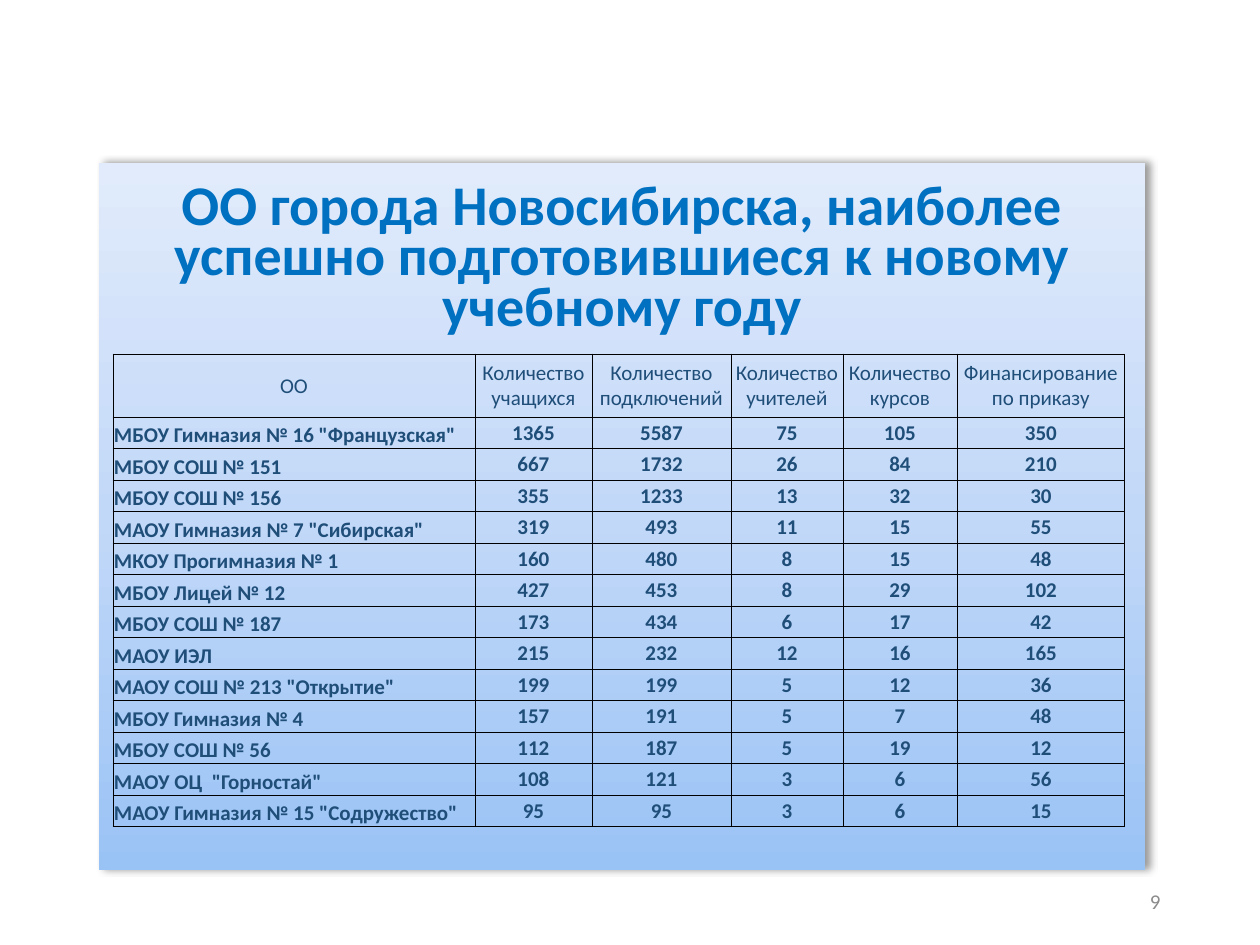
from copy import deepcopy

from pptx import Presentation
from pptx.dml.color import RGBColor
from pptx.enum.shapes import MSO_SHAPE as Shape
from pptx.enum.text import MSO_ANCHOR as Anchor, PP_ALIGN as Align
from pptx.oxml import parse_xml
from pptx.oxml.ns import nsdecls
from pptx.util import Pt

PX = 914400 // 126
SLIDE_SIZE = (1260, 945)
PANEL = (99, 163, 1046, 707)
PANEL_INSET = 22
PANEL_STOPS = [(0, "9AC3F5"), (0.5, "C2D8F8"), (1, "E1EBFB")]
NUMBER_BOX = (890, 876, 283, 50)
TABLE_ORIGIN = (113, 354)
COLUMN_WIDTHS = [362, 117, 139, 112, 114, 168]
HEADER_HEIGHT = 63
BODY_HEIGHT = 410
FONT = "Calibri"
TITLE_COLOR = "0070C0"
TABLE_COLOR = "1F4E79"
NUMBER_COLOR = "8C8C8C"

TITLE = "ОО города Новосибирска, наиболее успешно подготовившиеся к новому учебному году"
SLIDE_NUMBER = "9"
HEADER = (
    "ОО", "Количество учащихся", "Количество подключений",
    "Количество учителей", "Количество курсов", "Финансирование по приказу",
)
SCHOOLS = [
    ('МБОУ Гимназия № 16 "Французская"', 1365, 5587, 75, 105, 350),
    ("МБОУ СОШ № 151", 667, 1732, 26, 84, 210),
    ("МБОУ СОШ № 156", 355, 1233, 13, 32, 30),
    ('МАОУ Гимназия № 7 "Сибирская"', 319, 493, 11, 15, 55),
    ("МКОУ Прогимназия № 1", 160, 480, 8, 15, 48),
    ("МБОУ Лицей № 12", 427, 453, 8, 29, 102),
    ("МБОУ СОШ № 187", 173, 434, 6, 17, 42),
    ("МАОУ ИЭЛ", 215, 232, 12, 16, 165),
    ('МАОУ СОШ № 213 "Открытие"', 199, 199, 5, 12, 36),
    ("МБОУ Гимназия № 4", 157, 191, 5, 7, 48),
    ("МБОУ СОШ № 56", 112, 187, 5, 19, 12),
    ('МАОУ ОЦ  "Горностай"', 108, 121, 3, 6, 56),
    ('МАОУ Гимназия № 15 "Содружество"', 95, 95, 3, 6, 15),
]


def emu(*lengths):
    return [round(length * PX) for length in lengths]


def rgb(color):
    return RGBColor.from_string(color)


def write(text_frame, text, size, color, align, bold=False):
    text_frame.text = text
    paragraph = text_frame.paragraphs[0]
    paragraph.alignment = align
    for run in paragraph.runs:
        run.font.name = FONT
        run.font.size = Pt(size)
        run.font.bold = bold
        run.font.color.rgb = rgb(color)
    return paragraph


def add_panel(slide):
    panel = slide.shapes.add_shape(Shape.RECTANGLE, *emu(*PANEL))
    panel.line.fill.background()
    panel.fill.gradient()
    panel.fill.gradient_angle = 90
    properties = panel._element.spPr
    stop_list = properties.find(".//{*}gsLst")
    stop_list.append(deepcopy(stop_list[0]))
    for stop, (position, color) in zip(panel.fill.gradient_stops, PANEL_STOPS):
        stop.position = position
        stop.color.rgb = rgb(color)
    panel.shadow.inherit = False
    properties.find("{*}effectLst").append(parse_xml(
        f'<a:outerShdw {nsdecls("a")} blurRad="{Pt(4)}" dist="{Pt(3)}" dir="0" algn="l" '
        'rotWithShape="0"><a:srgbClr val="000000"><a:alpha val="40000"/></a:srgbClr></a:outerShdw>'
    ))
    frame = panel.text_frame
    frame.word_wrap = True
    frame.vertical_anchor = Anchor.TOP
    frame.margin_top = PANEL_INSET * PX
    write(frame, TITLE, 32, TITLE_COLOR, Align.CENTER, True).line_spacing = 0.75


def add_borders(cell):
    properties = cell._tc.get_or_add_tcPr()
    for side in "LRTB":
        properties.append(parse_xml(
            f'<a:ln{side} {nsdecls("a")} w="{Pt(0.5)}"><a:solidFill>'
            f'<a:srgbClr val="000000"/></a:solidFill></a:ln{side}>'
        ))


def add_school_table(slide):
    rows = [HEADER, *SCHOOLS]
    size = (sum(COLUMN_WIDTHS), HEADER_HEIGHT + BODY_HEIGHT)
    table = slide.shapes.add_table(
        len(rows), len(HEADER), *emu(*TABLE_ORIGIN, *size)).table
    table.first_row = table.horz_banding = False
    for column, width in zip(table.columns, emu(*COLUMN_WIDTHS)):
        column.width = width
    heights = [HEADER_HEIGHT] + [BODY_HEIGHT / len(SCHOOLS)] * len(SCHOOLS)
    for row_index, (values, height) in enumerate(zip(rows, emu(*heights))):
        table.rows[row_index].height = height
        for column_index, value in enumerate(values):
            cell = table.cell(row_index, column_index)
            is_name = row_index > 0 and column_index == 0
            cell.margin_left = cell.margin_right = cell.margin_top = PX
            cell.margin_bottom = 0
            cell.vertical_anchor = Anchor.BOTTOM if is_name else Anchor.MIDDLE
            add_borders(cell)
            cell.fill.background()
            align = Align.LEFT if is_name else Align.CENTER
            write(cell.text_frame, str(value), 12, TABLE_COLOR, align, row_index > 0)


def add_slide_number(slide):
    frame = slide.shapes.add_textbox(*emu(*NUMBER_BOX)).text_frame
    frame.word_wrap = True
    frame.vertical_anchor = Anchor.MIDDLE
    write(frame, SLIDE_NUMBER, 12, NUMBER_COLOR, Align.RIGHT)


def main():
    """Build the slide on the schools best prepared for the new year."""
    presentation = Presentation()
    presentation.slide_width, presentation.slide_height = emu(*SLIDE_SIZE)
    slide = presentation.slides.add_slide(presentation.slide_layouts[6])
    add_panel(slide)
    add_slide_number(slide)
    add_school_table(slide)
    presentation.save("out.pptx")


if __name__ == "__main__":
    main()
